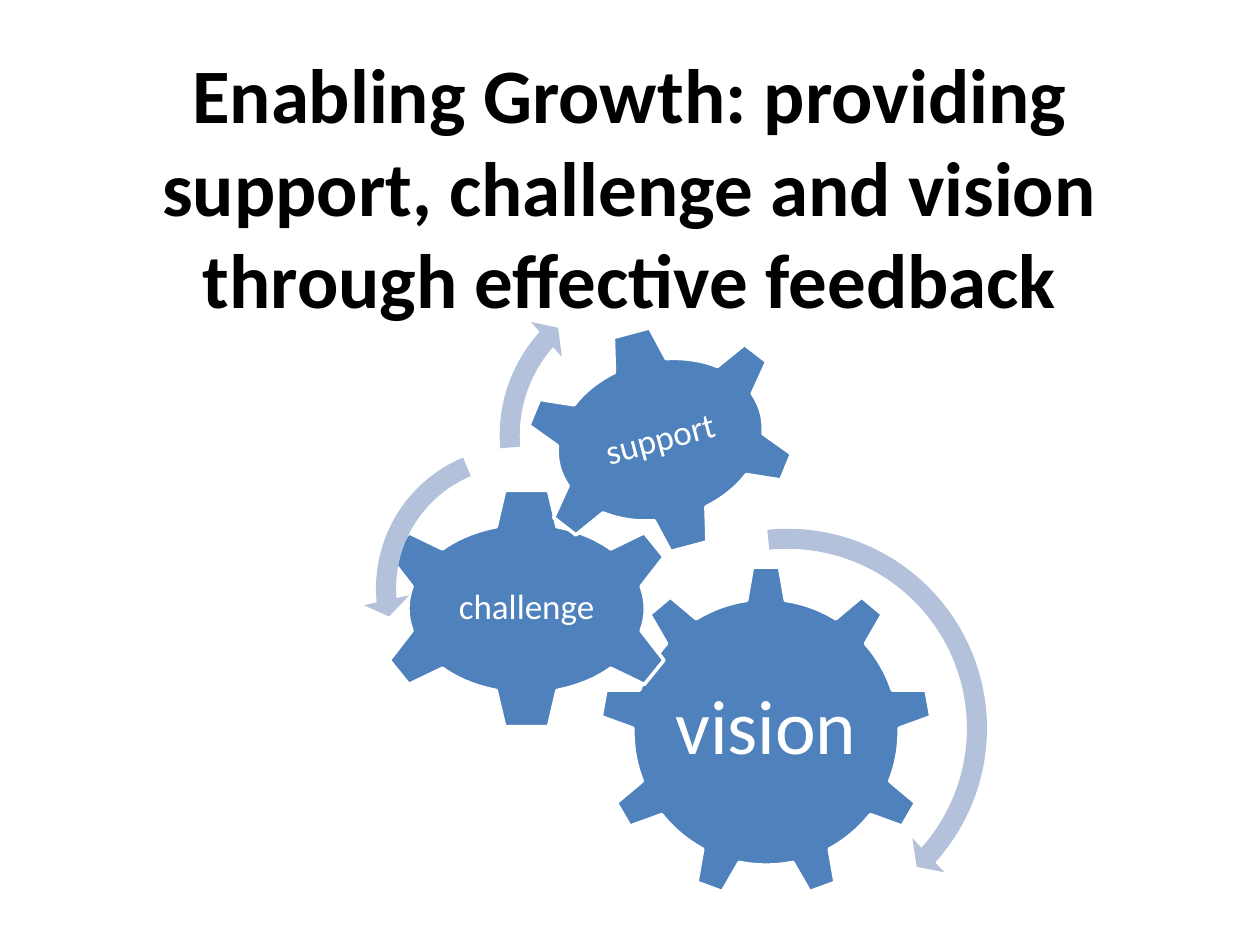
from dataclasses import dataclass

from pptx import Presentation
from pptx.dml.color import RGBColor
from pptx.enum.shapes import MSO_SHAPE as Preset
from pptx.enum.text import MSO_ANCHOR as Anchor, PP_ALIGN as Align
from pptx.util import Inches, Pt


@dataclass(frozen=True)
class Theme:
    font: str = "Calibri"
    ink: RGBColor = RGBColor(0x00, 0x00, 0x00)
    paper: RGBColor = RGBColor(0xFF, 0xFF, 0xFF)
    gear: RGBColor = RGBColor(0x4F, 0x81, 0xBD)
    motion: RGBColor = RGBColor(0xB3, 0xC1, 0xDB)
    large: int = 44
    small: int = 20
    outline: int = 2


class GearSlide:
    def __init__(self, slide, theme):
        self.shapes = slide.shapes
        self.theme = theme

    def label(self, frame, text, size, color, bold=False):
        frame.vertical_anchor = Anchor.MIDDLE
        paragraph = frame.paragraphs[0]
        paragraph.text = text
        paragraph.alignment = Align.CENTER
        font = paragraph.font
        font.name, font.size, font.bold = self.theme.font, Pt(size), bold
        font.color.rgb = color
        return paragraph

    def preset(self, kind, box, color):
        shape = self.shapes.add_shape(kind, *map(Inches, box))
        shape.shadow.inherit = False
        shape.fill.solid()
        shape.fill.fore_color.rgb = color
        return shape

    def title(self, text, box):
        frame = self.shapes.add_textbox(*map(Inches, box)).text_frame
        frame.word_wrap = True
        self.label(frame, text, self.theme.large, self.theme.ink, bold=True)

    def gear(self, kind, text, box, size, rotation=0):
        gear = self.preset(kind, box, self.theme.gear)
        gear.rotation = rotation
        gear.line.color.rgb = self.theme.paper
        gear.line.width = Pt(self.theme.outline)
        frame = gear.text_frame
        frame.word_wrap = False
        frame.margin_left = frame.margin_right = Inches(0.03)
        frame.margin_top = frame.margin_bottom = Inches(0.03)
        self.label(frame, text, size, self.theme.paper).line_spacing = 0.9

    def turn(self, kind, left, top, side, band, head, angles):
        arrow = self.preset(kind, (left, top, side, side), self.theme.motion)
        arrow.line.fill.background()
        head_angle, end, start = (degrees * 0.6 for degrees in angles)
        values = (band / 100, head_angle, end, start, head / 100)
        for index, value in enumerate(values):
            arrow.adjustments[index] = value


def main():
    deck = Presentation()
    deck.slide_width, deck.slide_height = Inches(10), Inches(7.5)
    theme = Theme()
    page = GearSlide(deck.slides.add_slide(deck.slide_layouts[6]), theme)

    page.title(
        "Enabling Growth: providing support, challenge and vision "
        "through effective feedback",
        (0.5, 0.13, 9, 2.68),
    )

    page.gear(Preset.GEAR_9, "vision", (4.76, 4.49, 2.64, 2.64), theme.large)
    page.gear(Preset.GEAR_6, "challenge", (2.95, 3.87, 2.46, 1.92), theme.small)
    page.gear(Preset.GEAR_6, "support", (4.14, 2.59, 2.2, 1.8), theme.small, 345)

    clockwise, counter = Preset.CIRCULAR_ARROW, Preset.LEFT_CIRCULAR_ARROW
    page.turn(clockwise, 4.56, 4.09, 3.38, 4.7, 5.5, (4.98, 42.01, 264.19))
    page.turn(counter, 2.88, 3.44, 2.46, 6.5, 7.5, (7.17, 174.82, 247.3))
    page.turn(clockwise, 3.86, 2.13, 2.65, 6, 7, (6.57, 221.9, 175.14))

    deck.save("out.pptx")


if __name__ == "__main__":
    main()
